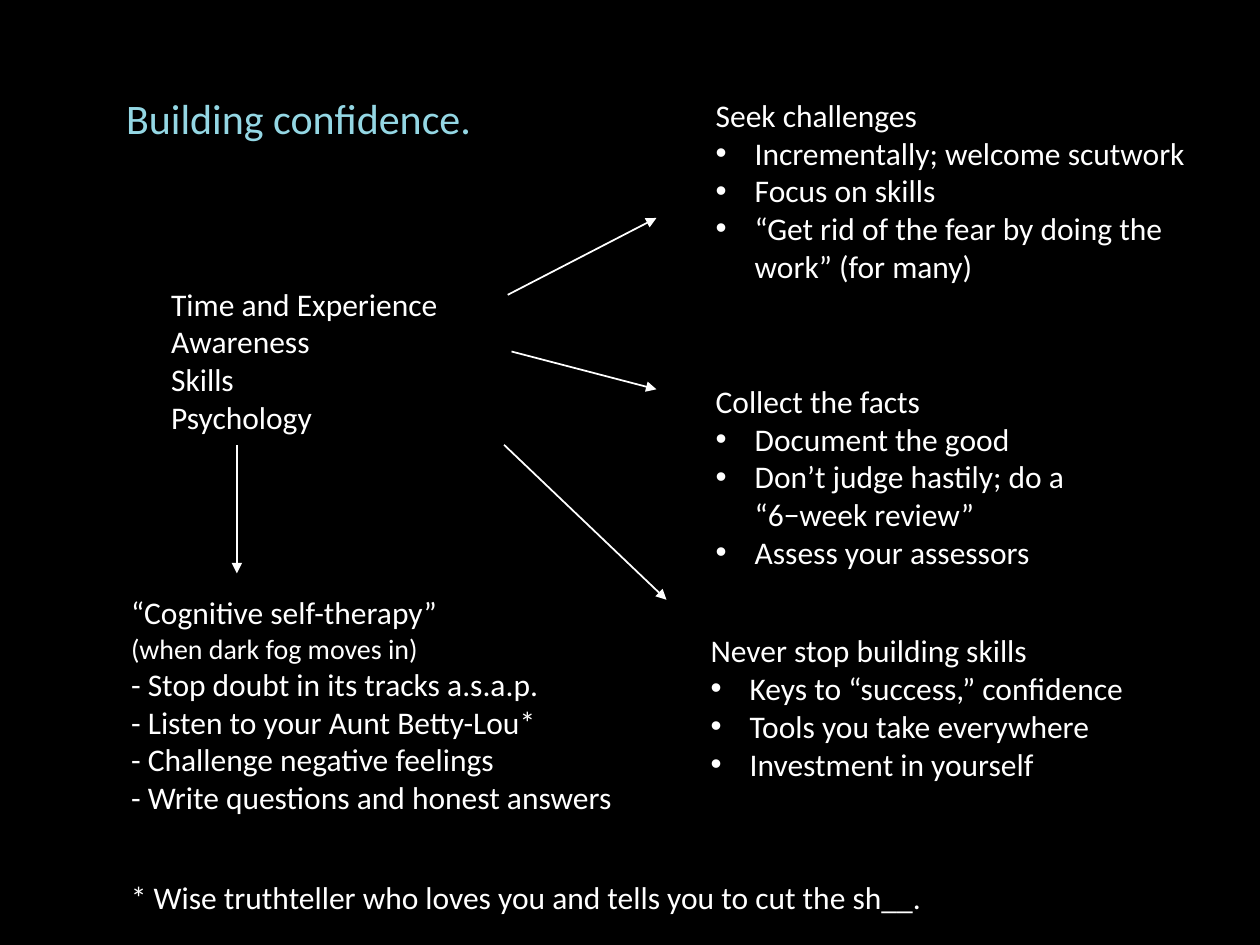
from lxml.etree import SubElement
from pptx import Presentation
from pptx.dml.color import RGBColor
from pptx.enum.shapes import MSO_CONNECTOR
from pptx.enum.text import MSO_ANCHOR, MSO_AUTO_SIZE, PP_ALIGN
from pptx.oxml.ns import qn
from pptx.util import Inches, Pt

FONT = "Calibri"
WHITE = "FFFFFF"
BLACK = "000000"
TITLE_BLUE = "94D7E4"
COMPARISON_LAYOUT = 4
BULLET_INDENT = 0.31

CAUSES = ["Time and Experience", "Awareness", "Skills", "Psychology"]
FOOTNOTE = ["* Wise truthteller who loves you and tells you to cut the sh__."]
ADVICE = [
    ((5.58, 0.71, 4.18, 1.62), "Seek challenges",
     ["Incrementally; welcome scutwork", "Focus on skills",
      "“Get rid of the fear by doing the work” (for many)"]),
    ((5.58, 2.98, 3.81, 1.62), "Collect the facts",
     ["Document the good", "Don’t judge hastily; do a “6−week review”",
      "Assess your assessors"]),
    ((5.54, 4.96, 3.58, 1.31), "Never stop building skills",
     ["Keys to “success,” confidence", "Tools you take everywhere",
      "Investment in yourself"]),
]
THERAPY = ["- Stop doubt in its tracks a.s.a.p.", "- Listen to your Aunt Betty-Lou*",
           "- Challenge negative feelings", "- Write questions and honest answers"]
ARROWS = [
    ((4.03, 2.34), (5.21, 1.73)),
    ((4.06, 2.79), (5.21, 3.09)),
    ((4.00, 3.53), (5.29, 4.76)),
    ((1.88, 3.53), (1.88, 4.55)),
]


def color(value):
    """Turn a hex string into a colour."""
    return RGBColor.from_string(value)


def place(shape, box, anchor=MSO_ANCHOR.TOP):
    """Position a text shape and return its prepared text frame."""
    shape.left, shape.top, shape.width, shape.height = map(Inches, box)
    frame = shape.text_frame
    frame.word_wrap = True
    frame.auto_size = MSO_AUTO_SIZE.NONE
    frame.vertical_anchor = anchor
    return frame


def add_run(paragraph, text, size=18, fill=WHITE):
    """Append a formatted run."""
    run = paragraph.add_run()
    run.text = text
    font = run.font
    font.name, font.size, font.bold = FONT, Pt(size), False
    font.color.rgb = color(fill)


def add_paragraph(frame, text, bullet=False):
    """Append a left-aligned paragraph, bulleted if asked."""
    first = frame.paragraphs[0]
    paragraph = frame.add_paragraph() if first.runs else first
    properties = paragraph._p.get_or_add_pPr()
    indent = Inches(BULLET_INDENT) if bullet else 0
    properties.set("marL", str(indent))
    properties.set("indent", str(-indent))
    if bullet:
        SubElement(properties, qn("a:buFont"), typeface="Arial")
        SubElement(properties, qn("a:buChar"), char="•")
    else:
        SubElement(properties, qn("a:buNone"))
    paragraph.alignment = PP_ALIGN.LEFT
    paragraph.space_before = Pt(0)
    add_run(paragraph, text)
    return paragraph


def add_title(slide):
    """Fill the title placeholder."""
    frame = place(slide.shapes.title, (0.36, 0.22, 4.02, 0.97), MSO_ANCHOR.BOTTOM)
    paragraph = frame.paragraphs[0]
    paragraph.alignment = PP_ALIGN.CENTER
    paragraph.line_spacing = 0.9
    add_run(paragraph, "Building confidence.", 24, TITLE_BLUE)


def add_advice(placeholder, box, heading, items):
    """Fill a body placeholder with a heading and bullets."""
    frame = place(placeholder, box)
    add_paragraph(frame, heading)
    for item in items:
        add_paragraph(frame, item, bullet=True)


def add_therapy(placeholder):
    """Fill a body placeholder with the self-therapy steps."""
    frame = place(placeholder, (0.94, 4.66, 4.07, 1.88))
    heading = add_paragraph(frame, "“Cognitive self-therapy”")
    heading.add_line_break()
    add_run(heading, "(when dark fog moves in)", 16)
    for step in THERAPY:
        add_paragraph(frame, step)


def add_text(slide, box, lines):
    """Add a text box with one paragraph per line."""
    frame = place(slide.shapes.add_textbox(*map(Inches, box)), box)
    for line in lines:
        add_paragraph(frame, line)


def add_arrow(slide, start, end):
    """Draw a thin white arrow."""
    arrow = slide.shapes.add_connector(
        MSO_CONNECTOR.STRAIGHT, *map(Inches, start + end))
    arrow.line.color.rgb = color(WHITE)
    arrow.line.width = Pt(1)
    SubElement(arrow.line._get_or_add_ln(), qn("a:tailEnd"), type="triangle")
    SubElement(arrow._element.spPr, qn("a:effectLst"))


def main():
    """Build and save the slide."""
    presentation = Presentation()
    presentation.slide_width, presentation.slide_height = Inches(10), Inches(7.5)
    slide = presentation.slides.add_slide(
        presentation.slide_layouts[COMPARISON_LAYOUT])
    background = slide.background.fill
    background.solid()
    background.fore_color.rgb = color(BLACK)

    add_title(slide)
    *advice_bodies, therapy_body = list(slide.placeholders)[1:5]
    for body, (box, heading, items) in zip(advice_bodies, ADVICE):
        add_advice(body, box, heading, items)
    add_therapy(therapy_body)
    add_text(slide, (1.26, 2.21, 2.38, 1.31), CAUSES)
    add_text(slide, (0.94, 6.92, 6.49, 0.4), FOOTNOTE)
    for start, end in ARROWS:
        add_arrow(slide, start, end)
    presentation.save("out.pptx")


if __name__ == "__main__":
    main()
